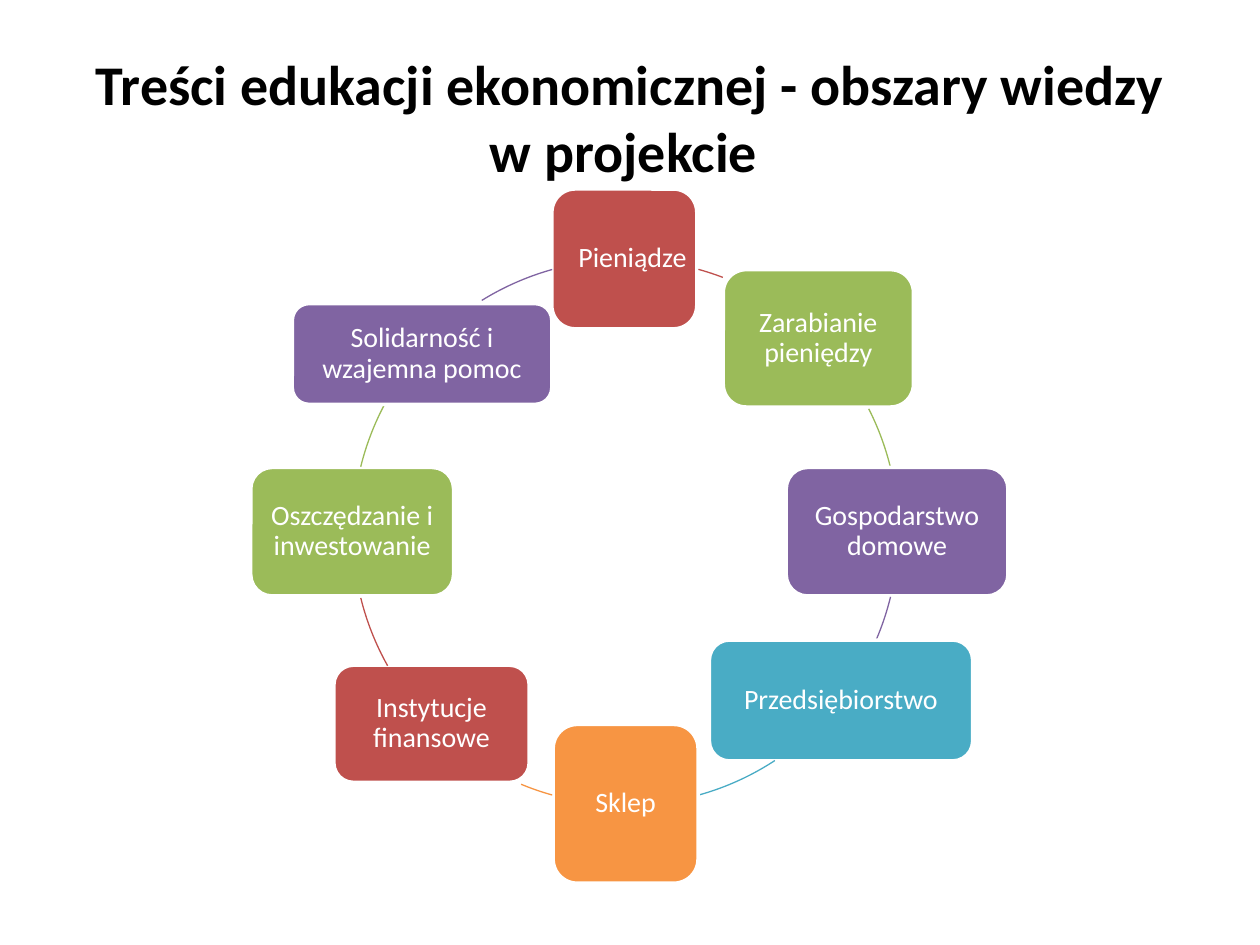
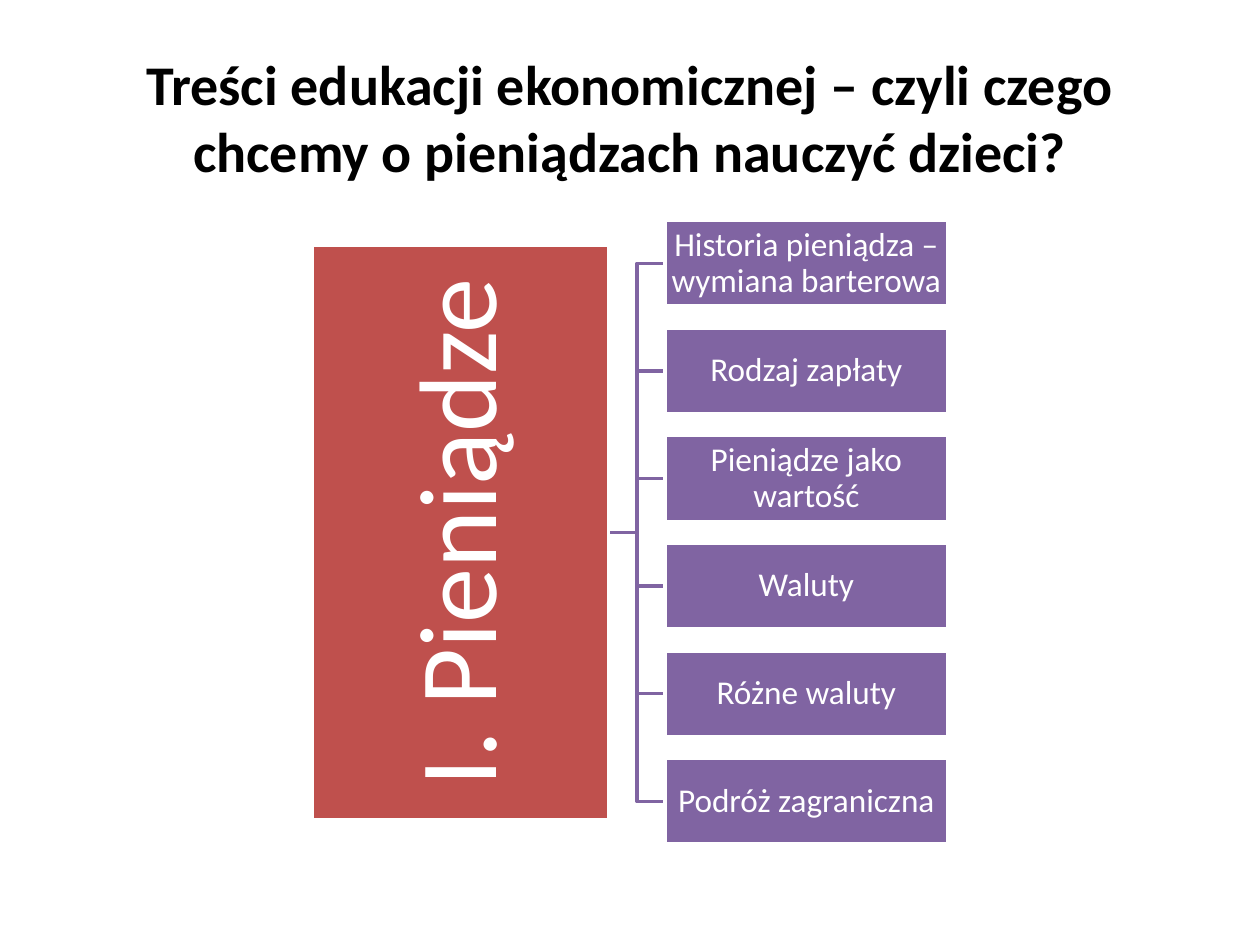
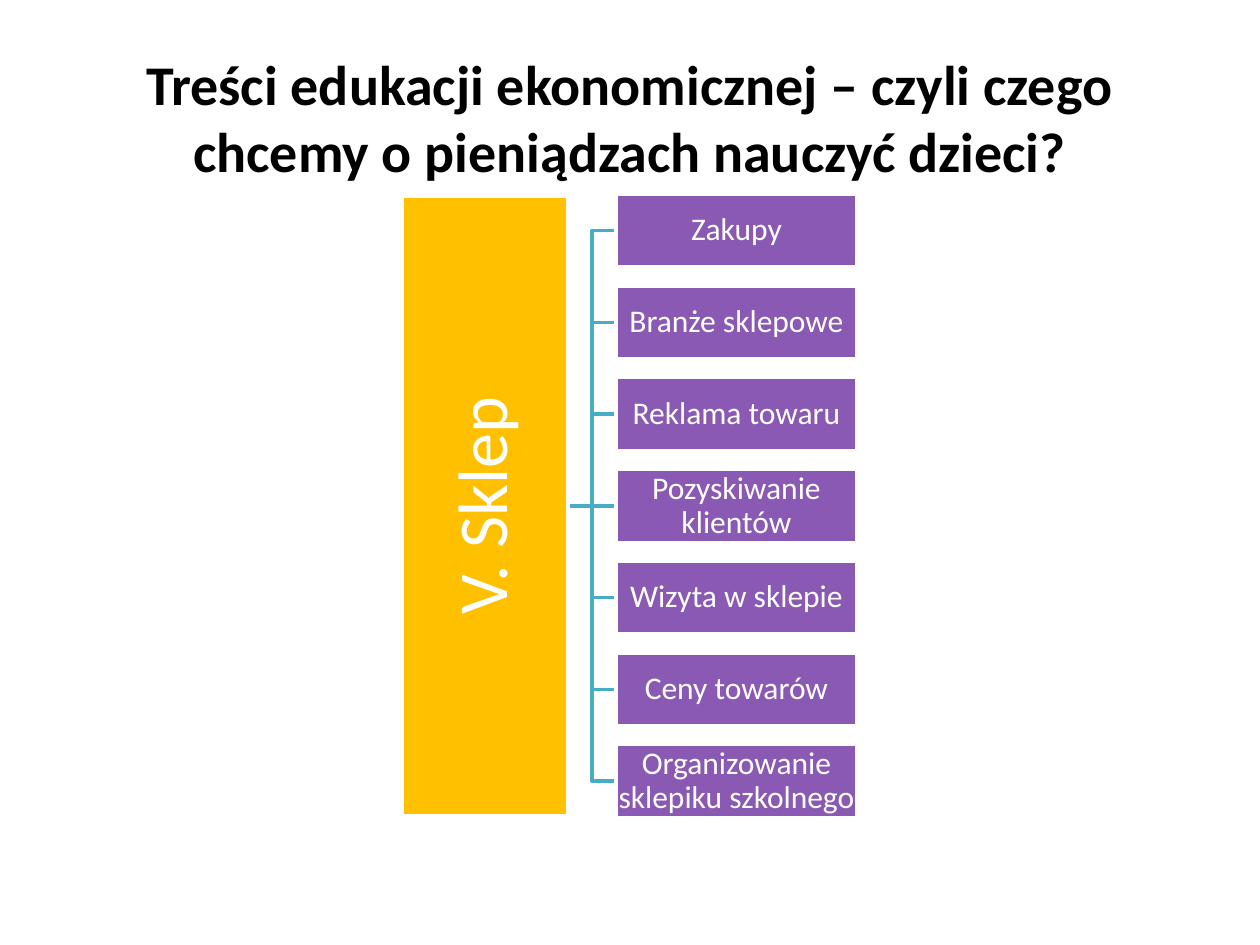
from lxml import etree
from pptx import Presentation
from pptx.dml.color import RGBColor
from pptx.enum.shapes import MSO_CONNECTOR, MSO_SHAPE
from pptx.enum.text import MSO_ANCHOR, PP_ALIGN
from pptx.oxml.ns import qn
from pptx.util import Inches, Pt

RECT = MSO_SHAPE.RECTANGLE
ROUNDED = MSO_SHAPE.ROUNDED_RECTANGLE
ARC = MSO_SHAPE.ARC
STRAIGHT = MSO_CONNECTOR.STRAIGHT
CENTER = PP_ALIGN.CENTER
MIDDLE = MSO_ANCHOR.MIDDLE

FONT = "Calibri"
BLACK = RGBColor(0x00, 0x00, 0x00)
WHITE = RGBColor(0xFF, 0xFF, 0xFF)
RED = RGBColor(0xBF, 0x50, 0x4D)
GREEN = RGBColor(0x9B, 0xBB, 0x59)
PURPLE = RGBColor(0x80, 0x64, 0xA2)
TEAL = RGBColor(0x49, 0xAC, 0xC5)
ORANGE = RGBColor(0xF7, 0x95, 0x43)
AMBER = RGBColor(0xFF, 0xC0, 0x00)
VIOLET = RGBColor(0x8A, 0x59, 0xB3)

AREAS_TITLE = "Treści edukacji ekonomicznej - obszary wiedzy w projekcie "
MONEY_TITLE = "Treści edukacji ekonomicznej – czyli czego chcemy o pieniądzach nauczyć dzieci?"

RING = (2.8, 2.06, 4.33, 4.33)
# text, colour, box, start and end angle of the arc that follows (clockwise from east)
AREAS = [
    ("Pieniądze", RED, (4.38, 1.5, 1.15, 1.11), (285.5, 290.9)),
    ("Zarabianie pieniędzy", GREEN, (5.74, 2.14, 1.51, 1.09), (333.1, 346.1)),
    ("Gospodarstwo domowe", PURPLE, (6.24, 3.71, 1.76, 1.02), (13.7, 23.3)),
    ("Przedsiębiorstwo", TEAL, (5.63, 5.08, 2.09, 0.96), (56.8, 74.4)),
    ("Sklep", ORANGE, (4.39, 5.75, 1.15, 1.26), (105.6, 112.5)),
    ("Instytucje finansowe", RED, (2.65, 5.28, 1.55, 0.93), (150.7, 166.1)),
    ("Oszczędzanie i inwestowanie", GREEN, (1.99, 3.71, 1.61, 1.02), (193.9, 208.1)),
    ("Solidarność i wzajemna pomoc", PURPLE, (2.32, 2.41, 2.06, 0.8), (238.2, 254.4)),
]

MONEY_TOPICS = ["Historia pieniądza – wymiana barterowa", "Rodzaj zapłaty",
                "Pieniądze jako wartość", "Waluty", "Różne waluty",
                "Podróż zagraniczna"]
SHOP_TOPICS = ["Zakupy", "Branże sklepowe", "Reklama towaru",
               "Pozyskiwanie klientów", "Wizyta w sklepie", "Ceny towarów",
               "Organizowanie sklepiku szkolnego"]


def add_titled_slide(prs, title):
    s = prs.slides.add_slide(prs.slide_layouts[5])
    ph = s.shapes.title
    ph.left, ph.top, ph.width, ph.height = map(Inches, (0.5, 0.3, 9, 1.25))
    tf = ph.text_frame
    tf.text = title
    tf.vertical_anchor = MIDDLE
    p = tf.paragraphs[0]
    p.alignment = CENTER
    set_font(p, 32, BLACK, True)
    return s


def set_font(p, size, color, bold=False):
    f = p.font
    f.name, f.size, f.bold = FONT, Pt(size), bold
    f.color.rgb = color


def add_box(s, kind, box, text, color, size, inset):
    """Filled box with a white outline and centred white text."""
    sp = s.shapes.add_shape(kind, *map(Inches, box))
    sp.shadow.inherit = False
    sp.fill.solid()
    sp.fill.fore_color.rgb = color
    sp.line.color.rgb = WHITE
    sp.line.width = Pt(2)
    tf = sp.text_frame
    tf.word_wrap = True
    tf.vertical_anchor = MIDDLE
    tf.margin_left = tf.margin_right = Inches(inset)
    tf.margin_top = tf.margin_bottom = Inches(inset)
    p = tf.paragraphs[0]
    p.text = text
    p.alignment = CENTER
    p.line_spacing = 0.9
    set_font(p, size, WHITE)
    return sp


def add_ring_arc(s, angles, color):
    sp = s.shapes.add_shape(ARC, *map(Inches, RING))
    for i, angle in enumerate(angles):
        sp.adjustments[i] = angle * 0.6  # 60000 units per degree, scaled by 100000
    sp.shadow.inherit = False
    sp.fill.background()
    sp.line.color.rgb = color
    sp.line.width = Pt(0.75)


def add_branch(s, x1, y1, x2, y2, color):
    """Elbow line from the label to a topic, straight when they are level."""
    if abs(y1 - y2) < 0.01:
        sp = s.shapes.add_connector(STRAIGHT, *map(Inches, (x1, y1, x2, y1)))
        etree.SubElement(sp._element.spPr, qn("a:effectLst"))
    else:
        mid = (x1 + x2) / 2
        fb = s.shapes.build_freeform(Inches(x1), Inches(y1))
        corners = [(mid, y1), (mid, y2), (x2, y2)]
        fb.add_line_segments([(Inches(x), Inches(y)) for x, y in corners], close=False)
        sp = fb.convert_to_shape()
        sp.shadow.inherit = False
        sp.fill.background()
    sp.line.color.rgb = color
    sp.line.width = Pt(2)


def add_cycle(s):
    for text, color, box, angles in AREAS:
        sp = add_box(s, ROUNDED, box, text, color, 16, 0.07)
        if text == "Pieniądze":
            sp.text_frame.margin_left, sp.text_frame.margin_right = Inches(0.13), 0
        add_ring_arc(s, angles, color)


def add_tree(s, label, label_size, label_color, label_left, label_width, label_length,
             topics, topic_size, topic_color, topic_box, last_top, line_color):
    """Upright label on the left, joined to evenly spaced topics on the right."""
    left, top, width, height = topic_box
    pitch = (last_top - top) / (len(topics) - 1)
    tops = [top + i * pitch for i in range(len(topics))]
    middle = (top + last_top + height) / 2
    for y in reversed(tops):
        add_branch(s, label_left + label_width, middle, left, y + height / 2, line_color)
    label_box = (label_left + (label_width - label_length) / 2,
                 middle - label_width / 2, label_length, label_width)
    add_box(s, RECT, label_box, label, label_color, label_size, 0.04).rotation = 270
    for y, topic in zip(tops, topics):
        add_box(s, RECT, (left, y, width, height), topic, topic_color, topic_size, 0.01)


def main():
    prs = Presentation()
    prs.slide_width, prs.slide_height = Inches(10), Inches(7.5)

    add_cycle(add_titled_slide(prs, AREAS_TITLE))
    add_tree(add_titled_slide(prs, MONEY_TITLE),
             "I. Pieniądze", 63, RED, 2.48, 2.35, 4.56,
             MONEY_TOPICS, 19, PURPLE, (5.28, 1.75, 2.24, 0.68), 6.02, PURPLE)
    add_tree(add_titled_slide(prs, MONEY_TITLE),
             "V. Sklep", 40, AMBER, 3.19, 1.32, 4.92,
             SHOP_TOPICS, 18, VIOLET, (4.89, 1.54, 1.91, 0.58), 5.91, TEAL)

    prs.save("out.pptx")


if __name__ == "__main__":
    main()
